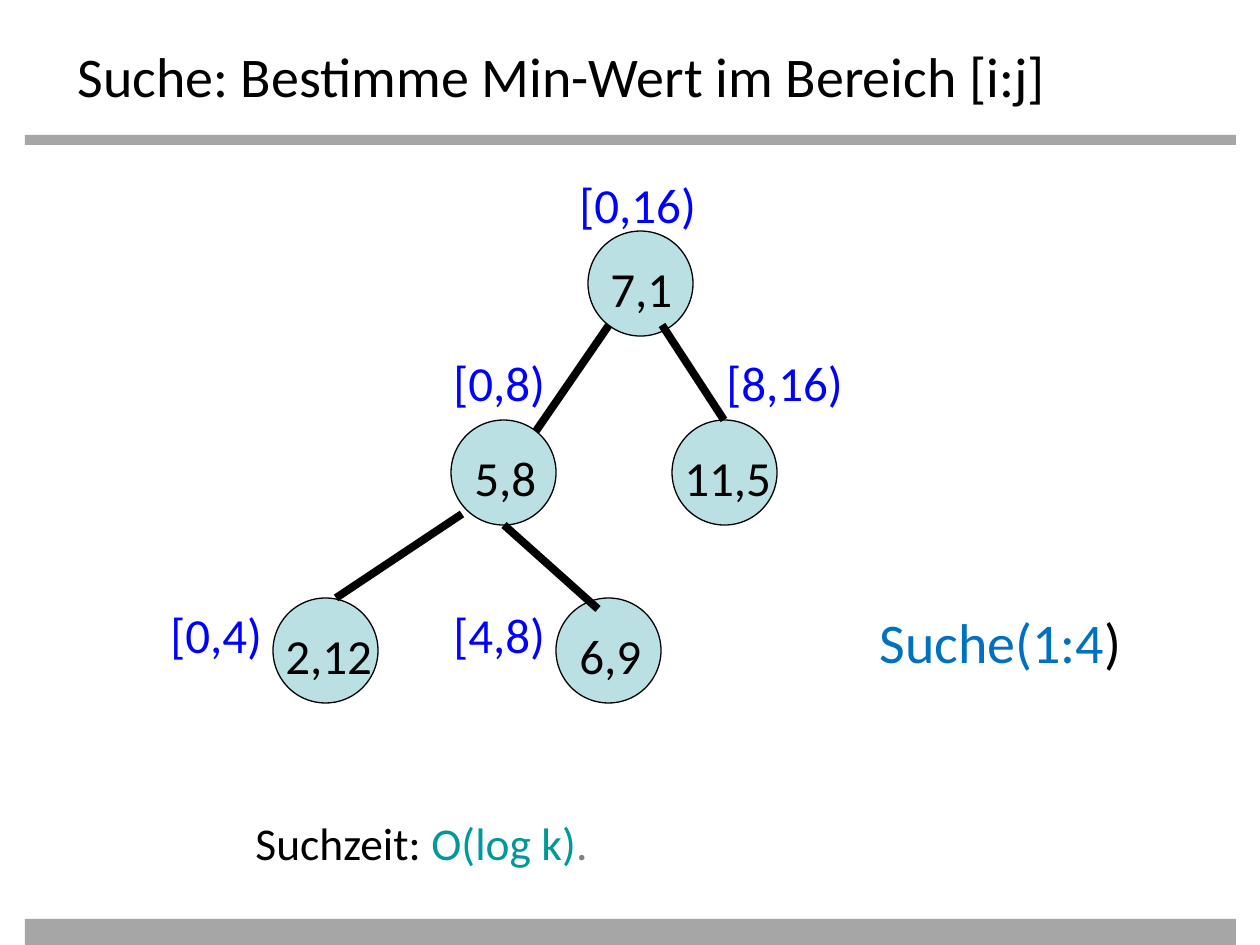
from dataclasses import dataclass
from typing import NamedTuple

from lxml.etree import SubElement
from pptx import Presentation
from pptx.dml.color import RGBColor
from pptx.enum.shapes import MSO_CONNECTOR as Connector, MSO_SHAPE as Preset
from pptx.oxml.ns import qn
from pptx.slide import Slide
from pptx.util import Emu, Pt

EMU_PER_PX = 914400 / 126
NODE_SIZE = 105
LABEL_HEIGHT = 72
RANGE_WIDTH = 158
VALUE_DROP = 21


@dataclass(frozen=True)
class Theme:
    font: str = "Calibri"
    black: str = "000000"
    bar: str = "A6A6A6"
    node: str = "BBE0E3"
    range: str = "0000FF"
    query: str = "0070C0"
    runtime: str = "009999"
    muted: str = "808080"
    title_size: int = 32
    body_size: int = 26
    label_size: int = 28
    outline: float = 0.75
    edge: float = 4.5


class Box(NamedTuple):
    left: int
    top: int
    width: int
    height: int


class Piece(NamedTuple):
    text: str
    color: str


class Node(NamedTuple):
    left: int
    top: int
    value: str
    value_inset: int
    value_width: int
    range: str
    range_left: int
    range_top: int


class Edge(NamedTuple):
    start_x: int
    start_y: int
    end_x: int
    end_y: int


THEME = Theme()

BARS = [Box(25, 135, 1211, 10), Box(25, 919, 1211, 26)]

NODES = [
    Node(588, 231, "7,1", 10, 95, "[0,16)", 567, 168),
    Node(451, 420, "5,8", 11, 95, "[0,8)", 441, 346),
    Node(556, 598, "6,9", 11, 95, "[4,8)", 441, 598),
    Node(672, 420, "11,5", 0, 126, "[8,16)", 714, 346),
    Node(273, 598, "2,12", 0, 116, "[0,4)", 158, 598),
]

EDGES = [
    Edge(609, 325, 536, 431),
    Edge(504, 525, 598, 609),
    Edge(662, 325, 724, 420),
    Edge(462, 514, 336, 598),
]


def px(length: int) -> Emu:
    return Emu(round(length * EMU_PER_PX))


def color(value: str) -> RGBColor:
    return RGBColor.from_string(value)


def draw_shape(slide: Slide, preset: Preset, box: Box, fill: str, outlined: bool) -> None:
    shape = slide.shapes.add_shape(preset, *map(px, box))
    shape.shadow.inherit = False
    shape.fill.solid()
    shape.fill.fore_color.rgb = color(fill)
    if outlined:
        shape.line.color.rgb = color(THEME.black)
        shape.line.width = Pt(THEME.outline)
    else:
        shape.line.fill.background()


def draw_text(slide: Slide, box: Box, size: int, *pieces: Piece) -> None:
    text_frame = slide.shapes.add_textbox(*map(px, box)).text_frame
    text_frame.word_wrap = True
    paragraph = text_frame.paragraphs[0]
    for piece in pieces:
        run = paragraph.add_run()
        run.text = piece.text
        run.font.name = THEME.font
        run.font.size = Pt(size)
        run.font.color.rgb = color(piece.color)


def draw_node(slide: Slide, node: Node) -> None:
    circle = Box(node.left, node.top, NODE_SIZE, NODE_SIZE)
    draw_shape(slide, Preset.OVAL, circle, THEME.node, True)
    value_box = Box(node.left + node.value_inset, node.top + VALUE_DROP,
                    node.value_width, LABEL_HEIGHT)
    draw_text(slide, value_box, THEME.label_size, Piece(node.value, THEME.black))
    range_box = Box(node.range_left, node.range_top, RANGE_WIDTH, LABEL_HEIGHT)
    draw_text(slide, range_box, THEME.label_size, Piece(node.range, THEME.range))


def draw_edge(slide: Slide, edge: Edge) -> None:
    connector = slide.shapes.add_connector(Connector.STRAIGHT, *map(px, edge))
    connector.line.color.rgb = color(THEME.black)
    connector.line.width = Pt(THEME.edge)
    SubElement(connector._element.spPr, qn("a:effectLst"))


def main() -> None:
    presentation = Presentation()
    presentation.slide_width = px(1260)
    presentation.slide_height = px(945)
    slide = presentation.slides.add_slide(presentation.slide_layouts[6])

    for bar in BARS:
        draw_shape(slide, Preset.RECTANGLE, bar, THEME.bar, False)
    draw_text(slide, Box(65, 35, 1134, 69), THEME.title_size,
              Piece("Suche: Bestimme Min-Wert im Bereich [i:j]", THEME.black))
    draw_text(slide, Box(243, 809, 912, 94), THEME.body_size,
              Piece("Suchzeit: ", THEME.black),
              Piece("O(log k)", THEME.runtime),
              Piece(".", THEME.muted))
    for node in NODES:
        draw_node(slide, node)
    for edge in EDGES:
        draw_edge(slide, edge)
    draw_text(slide, Box(867, 601, 305, 81), THEME.title_size,
              Piece("Suche(1:4", THEME.query),
              Piece(")", THEME.black))

    presentation.save("out.pptx")


if __name__ == "__main__":
    main()
